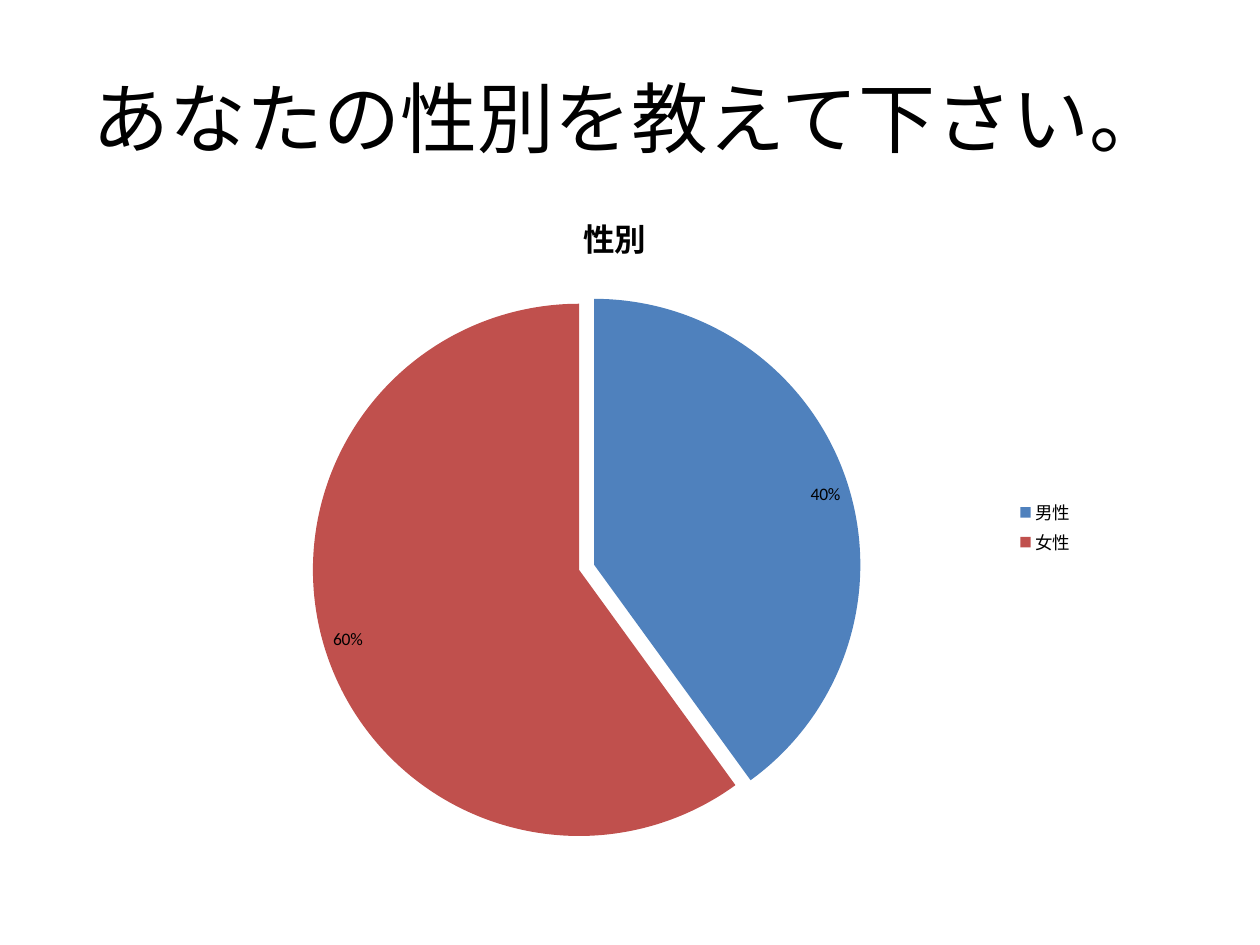
from dataclasses import dataclass

from lxml.etree import Element
from pptx import Presentation
from pptx.chart.chart import Chart
from pptx.chart.data import CategoryChartData
from pptx.dml.color import RGBColor
from pptx.enum.chart import XL_CHART_TYPE, XL_LABEL_POSITION, XL_LEGEND_POSITION
from pptx.enum.text import MSO_ANCHOR, PP_ALIGN
from pptx.oxml.ns import qn
from pptx.slide import Slide
from pptx.text.text import Font
from pptx.util import Inches, Pt

COLORS = {"text": "000000", "male": "4F81BD", "female": "C0504D"}
FONT_NAME = "Calibri"


@dataclass(frozen=True)
class Slice:
    label: str
    percent: int
    color: str
    explosion: int = 0


SLICES = [
    Slice("男性", 40, "male", explosion=6),
    Slice("女性", 60, "female"),
]


def style_font(font: Font, size: int, bold: bool = False) -> None:
    font.name = FONT_NAME
    font.size = Pt(size)
    font.bold = bold
    font.color.rgb = RGBColor.from_string(COLORS["text"])


def add_title(page: Slide, text: str) -> None:
    box = page.shapes.title
    box.left, box.top = Inches(0.5), Inches(0.3)
    box.width, box.height = Inches(9), Inches(1.25)
    frame = box.text_frame
    frame.text = text
    frame.vertical_anchor = MSO_ANCHOR.MIDDLE
    paragraph = frame.paragraphs[0]
    paragraph.alignment = PP_ALIGN.CENTER
    style_font(paragraph.runs[0].font, 44)


def style_slices(chart: Chart) -> None:
    series = chart.plots[0].series[0]
    for index, item in enumerate(SLICES):
        fill = series.points[index].format.fill
        fill.solid()
        fill.fore_color.rgb = RGBColor.from_string(COLORS[item.color])
        if item.explosion:
            explosion = Element(qn("c:explosion"), val=str(item.explosion))
            point = series._element.findall(qn("c:dPt"))[index]
            point.find(qn("c:spPr")).addprevious(explosion)


def add_pie(page: Slide, title: str) -> None:
    data = CategoryChartData()
    data.categories = [item.label for item in SLICES]
    data.add_series(title, [item.percent for item in SLICES])
    chart = page.shapes.add_chart(
        XL_CHART_TYPE.PIE, Inches(1.14), Inches(1.47), Inches(7.48), Inches(5.43), data
    ).chart
    style_font(chart.font, 10)

    chart.has_title = True
    heading = chart.chart_title.text_frame
    heading.text = title
    style_font(heading.paragraphs[0].runs[0].font, 18, bold=True)

    chart.has_legend = True
    chart.legend.position = XL_LEGEND_POSITION.RIGHT
    chart.legend.include_in_layout = False

    plot = chart.plots[0]
    plot.vary_by_categories = True
    plot.has_data_labels = True
    labels = plot.data_labels
    labels.show_value = False
    labels.show_percentage = True
    labels.number_format = "0%"
    labels.number_format_is_linked = False
    labels.position = XL_LABEL_POSITION.INSIDE_END
    style_slices(chart)


def main() -> None:
    deck = Presentation()
    deck.slide_width, deck.slide_height = Inches(10), Inches(7.5)
    page = deck.slides.add_slide(deck.slide_layouts[5])
    add_title(page, "あなたの性別を教えて下さい。")
    add_pie(page, "性別")
    deck.save("out.pptx")


if __name__ == "__main__":
    main()
